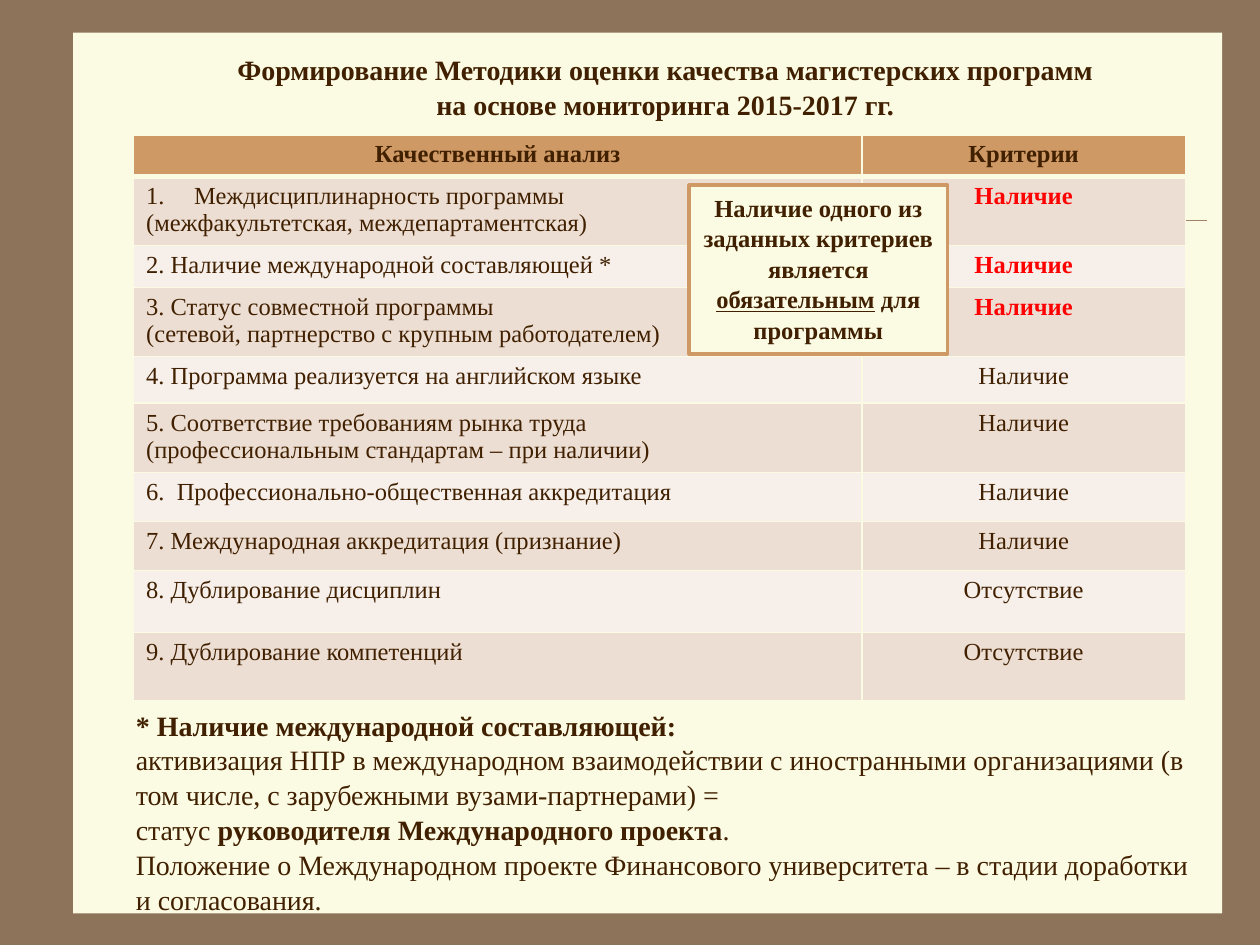
from lxml import etree
from pptx import Presentation
from pptx.dml.color import RGBColor
from pptx.enum.shapes import MSO_CONNECTOR, MSO_SHAPE
from pptx.enum.text import MSO_ANCHOR, PP_ALIGN
from pptx.oxml.ns import qn
from pptx.util import Inches, Pt

RECT = MSO_SHAPE.RECTANGLE
LINE = MSO_CONNECTOR.STRAIGHT
TOP = MSO_ANCHOR.TOP
LEFT, CENTER = PP_ALIGN.LEFT, PP_ALIGN.CENTER
FONT = "Times New Roman"
COLORS = {
    "back": "8C735A", "panel": "FBFAE2", "rule": "A08366", "text": "402000",
    "head": "CE9964", "odd": "EDDED3", "even": "F6EFEA", "key": "FF0000",
}
COLS = [5.78, 2.57]
HEIGHTS = [0.33, 0.55, 0.33, 0.55, 0.37, 0.55, 0.39, 0.39, 0.49, 0.54]
HEAD = ("Качественный анализ", "Критерии")
ROWS = [
    ("Междисциплинарность программы\n(межфакультетская, междепартаментская)", "Наличие", 0.38),
    ("2. Наличие международной составляющей *", "Наличие", 0),
    ("3. Статус совместной программы\n(сетевой, партнерство с крупным работодателем)", "Наличие", 0),
    ("4. Программа реализуется на английском языке", "Наличие", 0.25),
    ("5. Соответствие требованиям рынка труда\n(профессиональным стандартам – при наличии)", "Наличие", 0.25),
    ("6.  Профессионально-общественная аккредитация", "Наличие", 0),
    ("7. Международная аккредитация (признание)", "Наличие", 0),
    ("8. Дублирование дисциплин", "Отсутствие", 0.25),
    ("9. Дублирование компетенций", "Отсутствие", 0.25),
]
KEYS = 3
TITLE = [
    [("Формирование Методики оценки качества магистерских программ", "b")],
    [("на основе мониторинга 2015-2017 гг.", "b")],
]
CALL = [[
    ("Наличие одного из заданных критериев является ", "b"),
    ("обязательным", "bu"),
    (" для программы", "b"),
]]
NOTE = [
    [("* Наличие международной составляющей:", "b")],
    [("активизация НПР в международном взаимодействии с иностранными организациями "
      "(в том числе, с зарубежными вузами-партнерами) =", "")],
    [("статус ", ""), ("руководителя Международного проекта", "b"), (".", "")],
    [("Положение о Международном проекте Финансового университета – "
      "в стадии доработки и согласования.", "")],
]


def color(name):
    return RGBColor.from_string(COLORS[name])


def paint(fill, name):
    fill.solid()
    fill.fore_color.rgb = color(name)


def style(font, size, name="text", bold=False):
    font.name = FONT
    font.size = Pt(size)
    font.bold = bold
    font.color.rgb = color(name)


def write(frame, paras, size, align):
    frame.word_wrap = True
    frame.vertical_anchor = TOP
    for i, runs in enumerate(paras):
        para = frame.add_paragraph() if i else frame.paragraphs[0]
        para.alignment = align
        para.line_spacing = 1.04
        for text, marks in runs:
            run = para.add_run()
            run.text = text
            style(run.font, size, bold="b" in marks)
            if "u" in marks:
                run.font.underline = True


def add_text(slide, box, paras, size, align):
    shape = slide.shapes.add_textbox(*map(Inches, box))
    write(shape.text_frame, paras, size, align)


def add_rect(slide, box, fill, edge=None):
    shape = slide.shapes.add_shape(RECT, *map(Inches, box))
    shape.shadow.inherit = False
    paint(shape.fill, fill)
    if edge:
        shape.line.color.rgb = color(edge)
        shape.line.width = Pt(2)
    else:
        shape.line.fill.background()
    return shape


def add_panel(slide, box):
    x, y, w, h = box
    add_rect(slide, box, "panel")
    ends = (x + 0.53, y + 1.49, x + w - 0.12, y + 1.49)
    rule = slide.shapes.add_connector(LINE, *map(Inches, ends))
    rule.line.color.rgb = color("rule")
    rule.line.width = Pt(0.25)
    etree.SubElement(rule.element.spPr, qn("a:effectLst"))


def add_edges(cell, sizes):
    props = cell._tc.get_or_add_tcPr()
    for i, (side, size) in enumerate(zip("LRTB", sizes)):
        edge = etree.Element(qn(f"a:ln{side}"), w=str(Pt(size)))
        fill = etree.SubElement(edge, qn("a:solidFill"))
        etree.SubElement(fill, qn("a:srgbClr"), val=COLORS["panel"])
        props.insert(i, edge)


def fill_cell(cell, text, fill, align, name="text", bold=False, indent=0):
    cell.text_frame.text = text
    paint(cell.fill, fill)
    for para in cell.text_frame.paragraphs:
        para.alignment = align
        if indent:
            props = para._p.get_or_add_pPr()
            props.set("marL", str(Inches(indent)))
            props.set("indent", str(Inches(-indent)))
        for run in para.runs:
            style(run.font, 14, name, bold)


def add_grid(slide, box):
    frame = slide.shapes.add_table(len(HEIGHTS), len(COLS), *map(Inches, box))
    table = frame.table
    for col, width in zip(table.columns, COLS):
        col.width = Inches(width)
    for row, height in zip(table.rows, HEIGHTS):
        row.height = Inches(height)
    for cell, text in zip(table.rows[0].cells, HEAD):
        fill_cell(cell, text, "head", CENTER, bold=True)
        add_edges(cell, (1, 1, 1, 3))
    for i, (item, need, indent) in enumerate(ROWS, 1):
        fill = "odd" if i % 2 else "even"
        key = i <= KEYS
        left, right = table.rows[i].cells
        fill_cell(left, item, fill, LEFT, indent=indent)
        fill_cell(right, need, fill, CENTER, "key" if key else "text", key)
        for cell in (left, right):
            add_edges(cell, (1, 1, 3 if i == 1 else 1, 1))
    first = table.cell(1, 0).text_frame.paragraphs[0]
    etree.SubElement(first._p.get_or_add_pPr(), qn("a:buAutoNum"), type="arabicPeriod")


def add_call(slide, box):
    shape = add_rect(slide, box, "panel", "head")
    write(shape.text_frame, CALL, 14, CENTER)


def main():
    deck = Presentation()
    deck.slide_width, deck.slide_height = Inches(10), Inches(7.5)
    slide = deck.slides.add_slide(deck.slide_layouts[6])
    paint(slide.background.fill, "back")
    add_panel(slide, (0.58, 0.26, 9.12, 6.99))
    add_grid(slide, (1.06, 1.07, sum(COLS), sum(HEIGHTS)))
    add_text(slide, (0.98, 5.56, 8.58, 1.75), NOTE, 16, LEFT)
    add_call(slide, (5.47, 1.47, 2.05, 1.34))
    add_text(slide, (0.91, 0.36, 8.74, 0.71), TITLE, 16, CENTER)
    deck.save("out.pptx")


if __name__ == "__main__":
    main()
